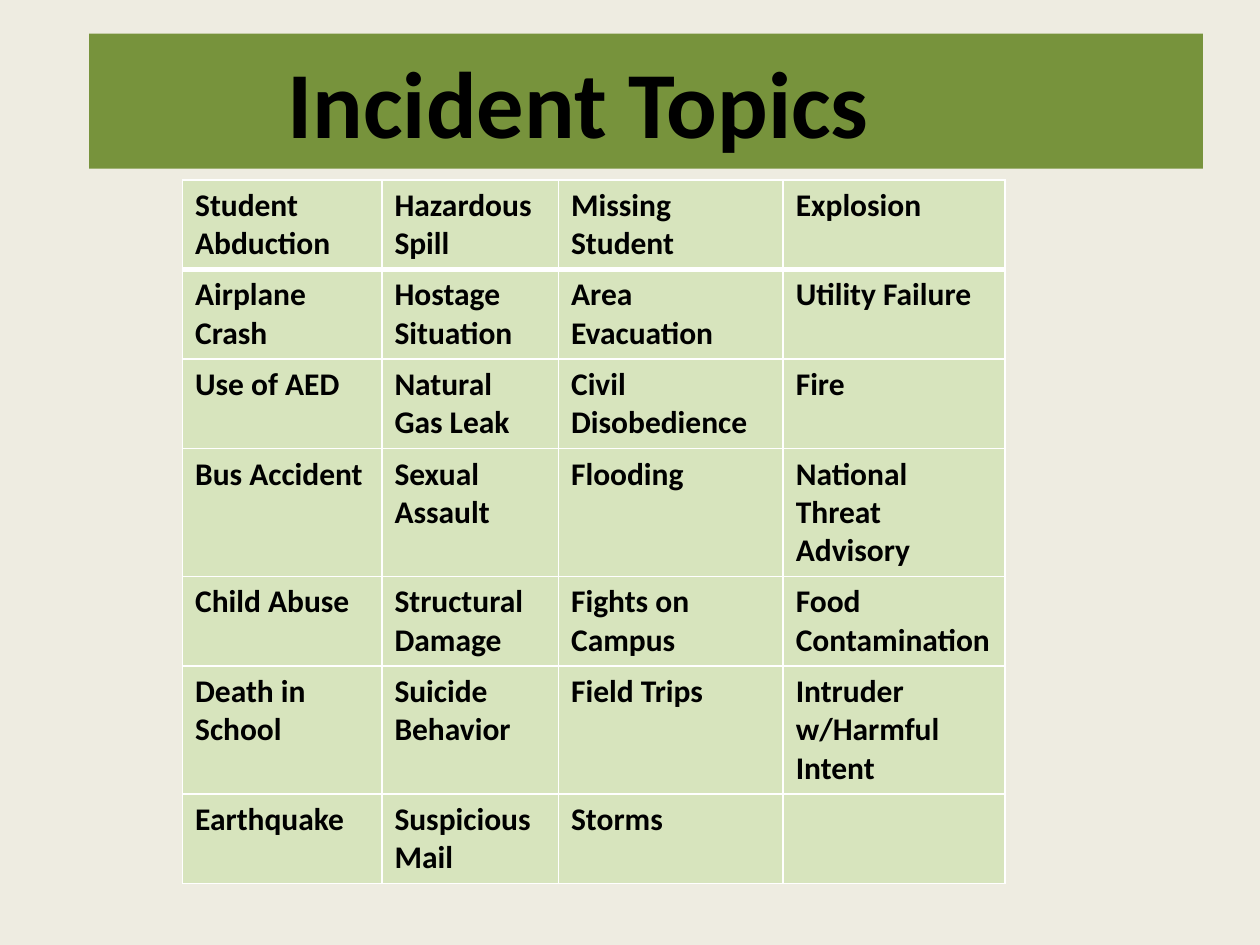
from lxml import etree
from pptx import Presentation
from pptx.dml.color import RGBColor
from pptx.enum.shapes import MSO_SHAPE
from pptx.enum.text import MSO_ANCHOR, PP_ALIGN
from pptx.oxml.ns import qn
from pptx.util import Cm, Pt

RECTANGLE = MSO_SHAPE.RECTANGLE
MIDDLE, TOP = MSO_ANCHOR.MIDDLE, MSO_ANCHOR.TOP
LEFT = PP_ALIGN.LEFT

COLORS = {
    "background": "EEECE1",
    "banner": "77933C",
    "cell": "D7E4BD",
    "border": "FFFFFF",
    "text": "000000",
}
FONT = "Calibri"

TITLE = "Incident Topics"
TOPICS = [
    ("Student Abduction", "Hazardous Spill", "Missing Student", "Explosion"),
    ("Airplane Crash", "Hostage Situation", "Area Evacuation", "Utility Failure"),
    ("Use of AED", "Natural Gas Leak", "Civil Disobedience", "Fire"),
    ("Bus Accident", "Sexual Assault", "Flooding", "National Threat Advisory"),
    ("Child Abuse", "Structural Damage", "Fights on Campus", "Food Contamination"),
    ("Death in School", "Suicide Behavior", "Field Trips", "Intruder w/Harmful Intent"),
    ("Earthquake", "Suspicious Mail", "Storms", ""),
]
COLUMN_WIDTHS = [4.02, 3.56, 4.53, 4.47]
LINES_PER_ROW = [2, 2, 2, 3, 2, 3, 2]
LINE_HEIGHT, ROW_PADDING = 0.78, 0.24


def color(name):
    return RGBColor.from_string(COLORS[name])


def paint(item, name):
    item.fill.solid()
    item.fill.fore_color.rgb = color(name)


def write(text_frame, text, size, anchor=TOP):
    text_frame.word_wrap = True
    text_frame.vertical_anchor = anchor
    paragraph = text_frame.paragraphs[0]
    paragraph.alignment = LEFT
    if text:
        run = paragraph.add_run()
        run.text = text
        run.font.name = FONT
        run.font.size = Pt(size)
        run.font.bold = True
        run.font.color.rgb = color("text")


def add_borders(cell, **widths):
    """Draw cell borders; widths are points keyed by L, R, T and B."""
    properties = cell._tc.get_or_add_tcPr()
    for side, width in widths.items():
        line = etree.SubElement(properties, qn(f"a:ln{side}"), w=str(Pt(width)))
        fill = etree.SubElement(line, qn("a:solidFill"))
        etree.SubElement(fill, qn("a:srgbClr"), val=COLORS["border"])


def add_banner(slide):
    banner = slide.shapes.add_shape(RECTANGLE, Cm(1.8), Cm(0.68), Cm(22.45), Cm(2.72))
    banner.shadow.inherit = False
    banner.line.fill.background()
    paint(banner, "banner")
    banner.text_frame.margin_left = Cm(4)
    write(banner.text_frame, TITLE, size=54, anchor=MIDDLE)


def add_topics(slide):
    heights = [lines * LINE_HEIGHT + ROW_PADDING for lines in LINES_PER_ROW]
    table = slide.shapes.add_table(
        len(TOPICS), len(COLUMN_WIDTHS), Cm(3.68), Cm(3.63),
        Cm(sum(COLUMN_WIDTHS)), Cm(sum(heights)),
    ).table
    for column, width in zip(table.columns, COLUMN_WIDTHS):
        column.width = Cm(width)
    for row_index, (topics, height) in enumerate(zip(TOPICS, heights)):
        table.rows[row_index].height = Cm(height)
        for column_index, topic in enumerate(topics):
            cell = table.cell(row_index, column_index)
            add_borders(cell, L=1, R=1, T=3 if row_index == 1 else 1,
                        B=3 if row_index == 0 else 1)
            paint(cell, "cell")
            write(cell.text_frame, topic, size=18)


def main():
    presentation = Presentation()
    presentation.slide_width = Cm(25.4)
    presentation.slide_height = Cm(19.05)
    slide = presentation.slides.add_slide(presentation.slide_layouts[6])
    paint(slide.background, "background")
    add_banner(slide)
    add_topics(slide)
    presentation.save("out.pptx")


if __name__ == "__main__":
    main()
